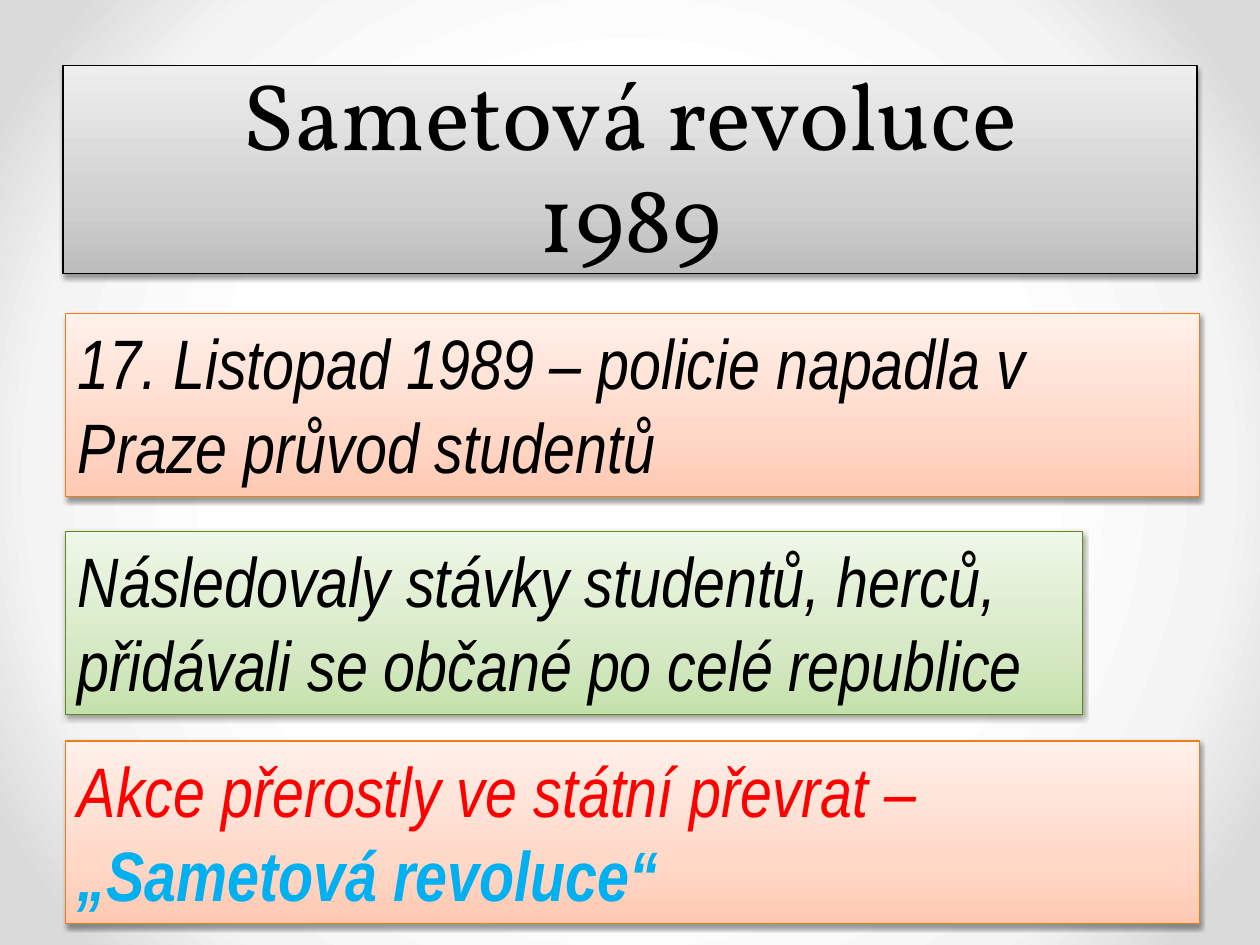
import pptx
import pptx.dml.color
import pptx.enum.text
import pptx.oxml
import pptx.oxml.ns
import pptx.util
from pptx.util import Inches

COLORS = {
    "text": "000000",
    "alert": "FF0000",
    "highlight": "00B0F0",
    "title_line": "000000",
    "orange_line": "E6811C",
    "green_line": "62891C",
}
# Gradient stops: (position in percent, colour)
GRADIENTS = {
    "background": [(50, "FFFFFF"), (76, "F4F4F4"), (92, "DADADA")],
    "title": [(0, "BDBDBD"), (35, "D1D1D1"), (100, "EEEEEE")],
    "orange": [(0, "FFC9B1"), (35, "FFD8C8"), (100, "FFF0EA")],
    "green": [(0, "C5E1AB"), (35, "D6E9C5"), (100, "EFF7E9")],
}
UPWARD = '<a:lin ang="16200000" scaled="0"/>'
RADIAL = ('<a:path path="circle">'
          '<a:fillToRect l="50000" t="50000" r="50000" b="50000"/></a:path>')
NS = pptx.oxml.ns.nsdecls("a")


def rgb(name):
    return pptx.dml.color.RGBColor.from_string(COLORS[name])


def set_gradient(fill, parent, theme, direction):
    """Give a fill a gradient of any number of stops."""
    fill.solid()
    stops = "".join(
        f'<a:gs pos="{pos * 1000}"><a:srgbClr val="{color}"/></a:gs>'
        for pos, color in GRADIENTS[theme])
    gradient = pptx.oxml.parse_xml(
        f'<a:gradFill {NS} rotWithShape="1"><a:gsLst>{stops}</a:gsLst>'
        f'{direction}</a:gradFill>')
    solid = next(parent.iter(pptx.oxml.ns.qn("a:solidFill")))
    solid.getparent().replace(solid, gradient)


def add_shadow(shape):
    shape.element.spPr.append(pptx.oxml.parse_xml(
        f'<a:effectLst {NS}><a:outerShdw blurRad="39370" dist="20320" '
        'dir="5400000" rotWithShape="0"><a:srgbClr val="000000">'
        '<a:alpha val="38000"/></a:srgbClr></a:outerShdw></a:effectLst>'))


def add_panel(slide, box, theme):
    """Gradient panel with outline and shadow; returns its text frame."""
    panel = slide.shapes.add_textbox(*map(Inches, box))
    set_gradient(panel.fill, panel.element.spPr, theme, UPWARD)
    panel.line.color.rgb = rgb(f"{theme}_line")
    panel.line.width = pptx.util.Pt(0.75)
    add_shadow(panel)
    panel.text_frame.word_wrap = True
    return panel.text_frame


def add_paragraphs(frame, lines, font_name, size):
    """Write each line, a list of (text, colour, bold) parts."""
    for index, parts in enumerate(lines):
        paragraph = frame.add_paragraph() if index else frame.paragraphs[0]
        paragraph.font.name = font_name
        paragraph.font.size = pptx.util.Pt(size)
        for text, color, bold in parts:
            run = paragraph.add_run()
            run.text = text
            run.font.color.rgb = rgb(color)
            run.font.bold = bold


def add_title(slide, box, lines):
    frame = add_panel(slide, box, "title")
    frame.vertical_anchor = pptx.enum.text.MSO_ANCHOR.MIDDLE
    add_paragraphs(frame, [[(line, "text", False)] for line in lines],
                   "Vollkorn", 54)
    for paragraph in frame.paragraphs:
        paragraph.alignment = pptx.enum.text.PP_ALIGN.CENTER
        paragraph.line_spacing = pptx.util.Pt(58)


def add_event(slide, box, theme, lines, wrap=True):
    frame = add_panel(slide, box, theme)
    frame.word_wrap = wrap
    frame.auto_size = pptx.enum.text.MSO_AUTO_SIZE.SHAPE_TO_FIT_TEXT
    add_paragraphs(frame, lines, "Arial Narrow", 40)
    for paragraph in frame.paragraphs:
        paragraph.font.italic = True


def main():
    deck = pptx.Presentation()
    deck.slide_width, deck.slide_height = Inches(10), Inches(7.5)
    slide = deck.slides.add_slide(deck.slide_layouts[6])
    set_gradient(slide.background.fill, slide.element, "background", RADIAL)

    # Heading
    add_title(slide, (0.5, 0.52, 9, 1.65), ["Sametová revoluce", "1989"])

    # Events in order of time
    left, height = 0.52, 1.45
    add_event(slide, (left, 2.49, 9, height), "orange", [
        [("17. Listopad 1989 – policie napadla v Praze průvod studentů",
          "text", False)]])
    add_event(slide, (left, 4.22, 8.07, height), "green", [
        [("Následovaly stávky studentů, herců,", "text", False)],
        [("přidávali se občané po celé republice", "text", False)]],
        wrap=False)
    add_event(slide, (left, 5.88, 9, height), "orange", [
        [("Akce přerostly ve státní převrat – ", "alert", False),
         ("„Sametová revoluce“", "highlight", True)]])

    deck.save("out.pptx")


if __name__ == "__main__":
    main()
